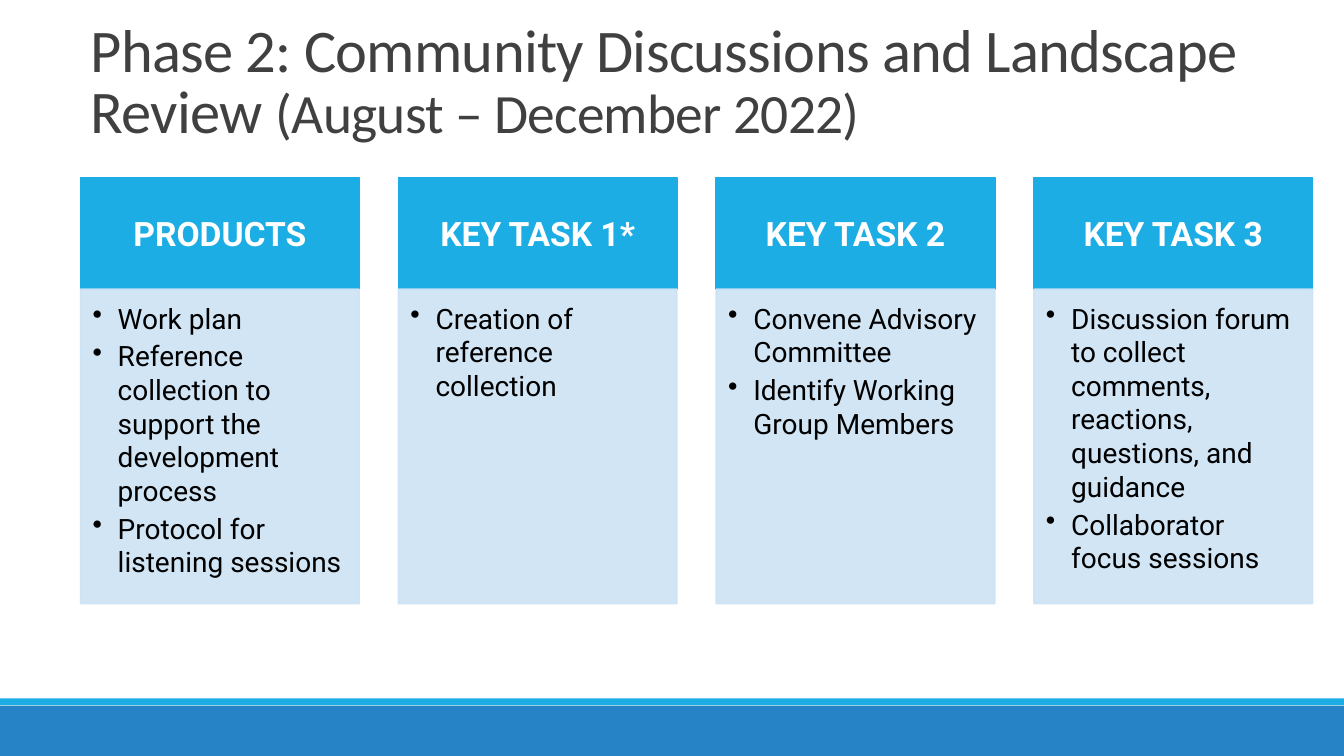
from pptx import Presentation
from pptx.dml.color import RGBColor
from pptx.enum.shapes import MSO_SHAPE as SHAPE
from pptx.enum.text import MSO_ANCHOR as ANCHOR, PP_ALIGN as ALIGN
from pptx.oxml.ns import qn
from pptx.util import Pt
from lxml.etree import SubElement

BLUE, DARK_BLUE, PALE_BLUE = "1CADE4", "2683C6", "CDE3F5"
SLIDE_W, SLIDE_H = 960, 540
LEFT, COLUMN_W, PITCH = 57.6, 198.9, 227
HEADER_TOP, HEADER_H, BODY_H = 126.7, 79.9, 224.6

COLUMNS = [
    ("PRODUCTS", ["Work plan",
                  "Reference collection to support the development process",
                  "Protocol for listening sessions"]),
    ("KEY TASK 1*", ["Creation of reference collection"]),
    ("KEY TASK 2", ["Convene Advisory Committee",
                    "Identify Working Group Members"]),
    ("KEY TASK 3", ["Discussion forum to collect comments, reactions, "
                    "questions, and guidance",
                    "Collaborator focus sessions"]),
]


def rgb(color):
    return RGBColor.from_string(color)


def add_run(p, text, size, font="Roboto", color="000000", bold=False, spacing=0):
    """Add formatted text; spacing is the letter spacing in points."""
    r = p.add_run()
    r.text = text
    r.font.size, r.font.name, r.font.bold = Pt(size), font, bold
    r.font.color.rgb = rgb(color)
    if spacing:
        r.font._element.set("spc", str(round(spacing * 100)))


def set_frame(sp, anchor, insets=(7.2, 3.6, 7.2, 3.6)):
    """Set wrapping, anchor and the left, top, right and bottom insets."""
    tf = sp.text_frame
    tf.word_wrap, tf.vertical_anchor = True, anchor
    (tf.margin_left, tf.margin_top,
     tf.margin_right, tf.margin_bottom) = map(Pt, insets)
    return tf


def add_rect(s, x, y, w, h, color, outlined=False, opacity=100):
    sp = s.shapes.add_shape(SHAPE.RECTANGLE, Pt(x), Pt(y), Pt(w), Pt(h))
    sp.shadow.inherit = False
    sp.fill.solid()
    sp.fill.fore_color.rgb = rgb(color)
    if outlined:
        sp.line.color.rgb = rgb(color)
        sp.line.width = Pt(1.25)
    else:
        sp.line.fill.background()
    if opacity < 100:
        for clr in sp._element.spPr.iter(qn("a:srgbClr")):
            SubElement(clr, qn("a:alpha"), val=str(opacity * 1000))
    return sp


def add_bullet(p, indent):
    pPr = p._p.get_or_add_pPr()
    pPr.set("marL", str(Pt(indent)))
    pPr.set("indent", str(-Pt(indent)))
    SubElement(pPr, qn("a:buChar"), char="•")


def add_title(s):
    box = s.shapes.add_textbox(Pt(LEFT), Pt(59), Pt(880.6), Pt(49))
    p = set_frame(box, ANCHOR.BOTTOM).paragraphs[0]
    p.line_spacing = 0.85
    for text, size in (("Phase 2: Community Discussions and Landscape Review ", 43.2),
                       ("(August – December 2022)", 39.6)):
        add_run(p, text, size, font="Calibri", color="404040", spacing=-0.5)


def add_column(s, x, heading, items):
    header = add_rect(s, x, HEADER_TOP, COLUMN_W, HEADER_H, BLUE, outlined=True)
    p = set_frame(header, ANCHOR.MIDDLE, (13.7, 7.8, 13.7, 7.8)).paragraphs[0]
    p.alignment = ALIGN.CENTER
    add_run(p, heading, 24, color="FFFFFF", bold=True)

    body = add_rect(s, x, HEADER_TOP + HEADER_H, COLUMN_W, BODY_H, PALE_BLUE,
                    outlined=True, opacity=90)
    tf = set_frame(body, ANCHOR.TOP, (8.5, 8.5, 11.4, 12.5))
    for i, item in enumerate(items):
        p = tf.add_paragraph() if i else tf.paragraphs[0]
        p.alignment = ALIGN.LEFT
        p.space_after = Pt(3)
        add_bullet(p, 18)
        add_run(p, item, 20)


def main():
    prs = Presentation()
    prs.slide_width, prs.slide_height = Pt(SLIDE_W), Pt(SLIDE_H)
    s = prs.slides.add_slide(prs.slide_layouts[6])
    add_rect(s, 0, 504, SLIDE_W, 36, DARK_BLUE)
    add_rect(s, 0, 498.8, SLIDE_W, 5, BLUE)
    add_title(s)
    for i, (heading, items) in enumerate(COLUMNS):
        add_column(s, LEFT + i * PITCH, heading, items)
    prs.save("out.pptx")


if __name__ == "__main__":
    main()
